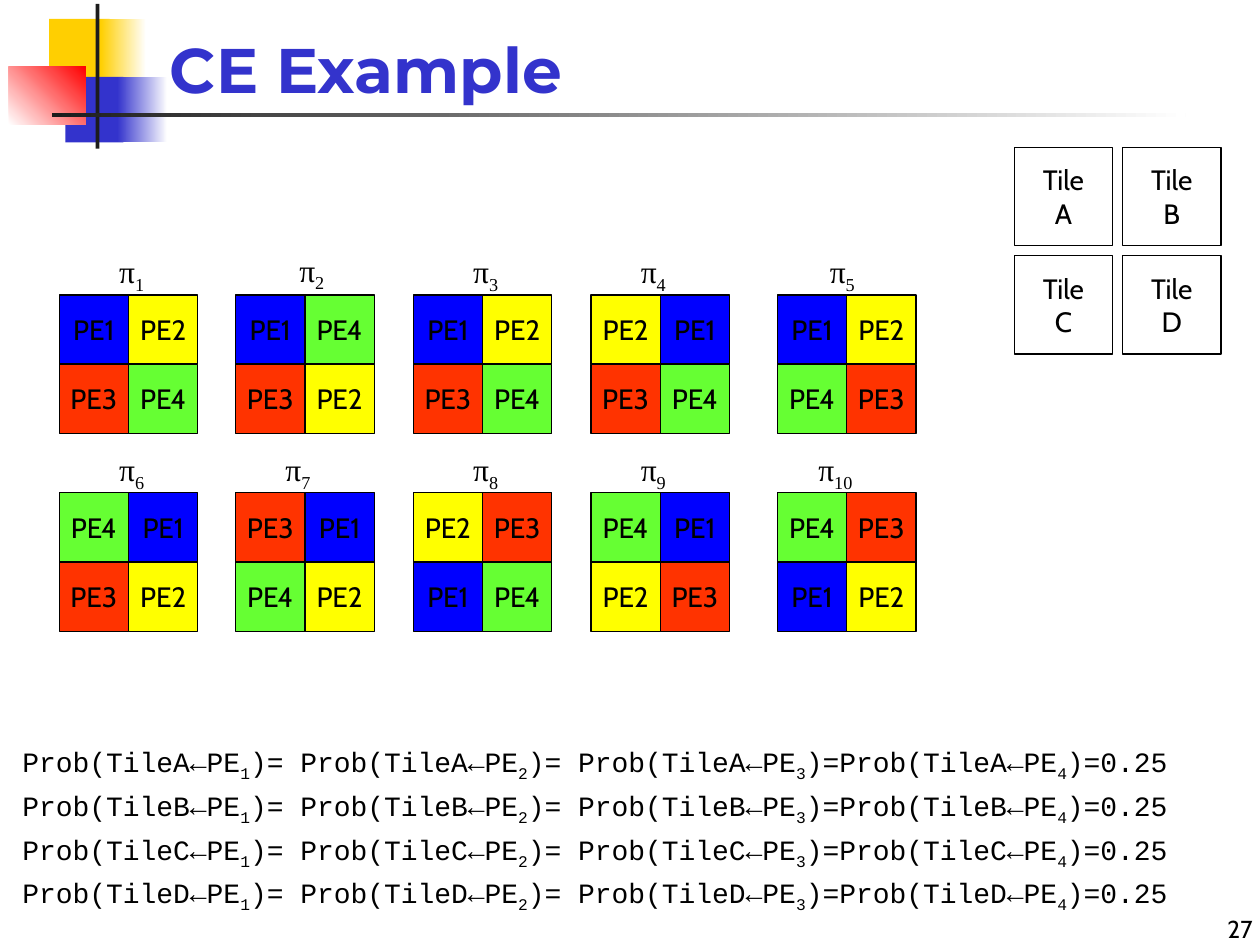
from pptx import Presentation
from pptx.dml.color import RGBColor
from pptx.enum.shapes import MSO_SHAPE
from pptx.enum.text import MSO_ANCHOR, PP_ALIGN
from pptx.util import Inches, Pt

COLORS = {
    "black": "000000", "white": "FFFFFF", "ink": "1C1C1C",
    "gold": "FFCF01", "indigo": "3333CC", "red": "FF0000",
    "PE1": "0000FF", "PE2": "FFFF00", "PE3": "FF3300", "PE4": "66FF33",
}
COLUMNS = [0.47, 1.87, 3.28, 4.69, 6.17]
CELL = 0.55
# Each mapping: PE numbers in reading order, then left and top of its label
MAPPING_ROWS = [
    (2.34, [("1234", 0.84, 1.95), ("1432", 2.27, 1.94), ("1234", 3.65, 1.95),
            ("2134", 4.98, 1.95), ("1243", 6.48, 1.95)]),
    (3.91, [("4132", 0.84, 3.52), ("3142", 2.16, 3.52), ("2314", 3.65, 3.52),
            ("4123", 4.98, 3.52), ("4312", 6.38, 3.52)]),
]


def rgb(name):
    return RGBColor.from_string(COLORS[name])


def write(frame, text, size=16, font="Cabin", color="black", bold=False,
          align=PP_ALIGN.LEFT, anchor=MSO_ANCHOR.TOP, wrap=True,
          space_before=0, hanging=0):
    """Fill a frame, one paragraph a line; text between bars is subscript."""
    frame.word_wrap = wrap
    frame.vertical_anchor = anchor
    for index, line in enumerate(text.split("\n")):
        para = frame.add_paragraph() if index else frame.paragraphs[0]
        para.alignment = align
        para.space_before = Pt(space_before)
        if hanging:
            properties = para._p.get_or_add_pPr()
            properties.set("marL", str(Inches(hanging)))
            properties.set("indent", str(Inches(-hanging)))
        for position, part in enumerate(line.split("|")):
            if not part:
                continue
            span = para.add_run()
            span.text = part
            span.font.size = Pt(size)
            span.font.name = font
            span.font.bold = bold
            span.font.color.rgb = rgb(color)
            if position % 2:
                span._r.get_or_add_rPr().set("baseline", "-25000")


def add_label(page, box, text, **style):
    label = page.shapes.add_textbox(*map(Inches, box))
    write(label.text_frame, text, **style)


def add_rectangle(shapes, box, fill=None, fade_to=None, angle=0, outlined=False):
    rectangle = shapes.add_shape(MSO_SHAPE.RECTANGLE, *map(Inches, box))
    rectangle.shadow.inherit = False
    if fade_to:
        rectangle.fill.gradient()
        rectangle.fill.gradient_angle = angle
        for stop, name in zip(rectangle.fill.gradient_stops, (fill, fade_to)):
            stop.color.rgb = rgb(name)
    elif fill:
        rectangle.fill.solid()
        rectangle.fill.fore_color.rgb = rgb(fill)
    else:
        rectangle.fill.background()
    if outlined:
        rectangle.line.color.rgb = rgb("black")
        rectangle.line.width = Pt(0.75)
    else:
        rectangle.line.fill.background()
    return rectangle


def add_cell(shapes, box, text, fill=None):
    cell = add_rectangle(shapes, box, fill, outlined=True)
    write(cell.text_frame, text, align=PP_ALIGN.CENTER,
          anchor=MSO_ANCHOR.MIDDLE, wrap=False)


def add_ornament(page):
    shapes = page.shapes
    add_rectangle(shapes, (0.39, 0.15, 0.48, 0.52), "gold")
    add_rectangle(shapes, (0.8, 0.15, 0.36, 0.52), "gold", "white")
    add_rectangle(shapes, (0.52, 0.61, 0.46, 0.52), "indigo")
    add_rectangle(shapes, (0.93, 0.61, 0.4, 0.52), "indigo", "white")
    add_rectangle(shapes, (0.07, 0.53, 0.61, 0.46), "white", "red", angle=45)
    add_rectangle(shapes, (0.76, 0.03, 0.03, 1.15), "ink")
    add_rectangle(shapes, (0.41, 0.9, 9, 0.03), "ink", "white")


def add_mapping(page, left, top, order):
    """Draw a two by two grid of processing elements."""
    group = page.shapes.add_group_shape()
    for index, number in enumerate(order):
        row, column = divmod(index, 2)
        box = (left + column * CELL, top + row * CELL, CELL, CELL)
        add_cell(group.shapes, box, f"PE{number}", f"PE{number}")


def add_mappings(page):
    number = 0
    for top, mappings in MAPPING_ROWS:
        for left, (order, label_left, label_top) in zip(COLUMNS, mappings):
            number += 1
            add_mapping(page, left, top, order)
            width = 0.5 if number > 9 else 0.41
            add_label(page, (label_left, label_top, width, 0.4),
                      f"π|{number}|", size=18, font="Times New Roman",
                      align=PP_ALIGN.CENTER, wrap=False)


def add_tiles(page, left, top, size=0.78, pitch=0.86):
    for index, name in enumerate("ABCD"):
        row, column = divmod(index, 2)
        box = (left + column * pitch, top + row * pitch, size, size)
        add_cell(page.shapes, box, f"Tile\n{name}")


def add_probabilities(page, box):
    lines = []
    for tile in "ABCD":
        terms = [f"Prob(Tile{tile}←PE|{number}|)" for number in range(1, 5)]
        lines.append("= ".join(terms[:3]) + f"={terms[3]}=0.25")
    add_label(page, box, "\n".join(lines), font="Courier New",
              space_before=3.2, hanging=0.38)


def main():
    deck = Presentation()
    deck.slide_width, deck.slide_height = Inches(10), Inches(7.5)
    page = deck.slides.add_slide(deck.slide_layouts[6])
    add_ornament(page)
    add_probabilities(page, (0.08, 5.86, 9.92, 1.41))
    add_label(page, (1.25, -0.03, 8.75, 0.92), "CE Example", size=36,
              font="Montserrat", color="indigo", bold=True,
              anchor=MSO_ANCHOR.BOTTOM)
    add_mappings(page)
    add_tiles(page, 8.05, 1.17)
    add_label(page, (7.96, 7.04, 2.08, 0.5), "27", size=14,
              align=PP_ALIGN.RIGHT, anchor=MSO_ANCHOR.BOTTOM)
    deck.save("out.pptx")


if __name__ == "__main__":
    main()
